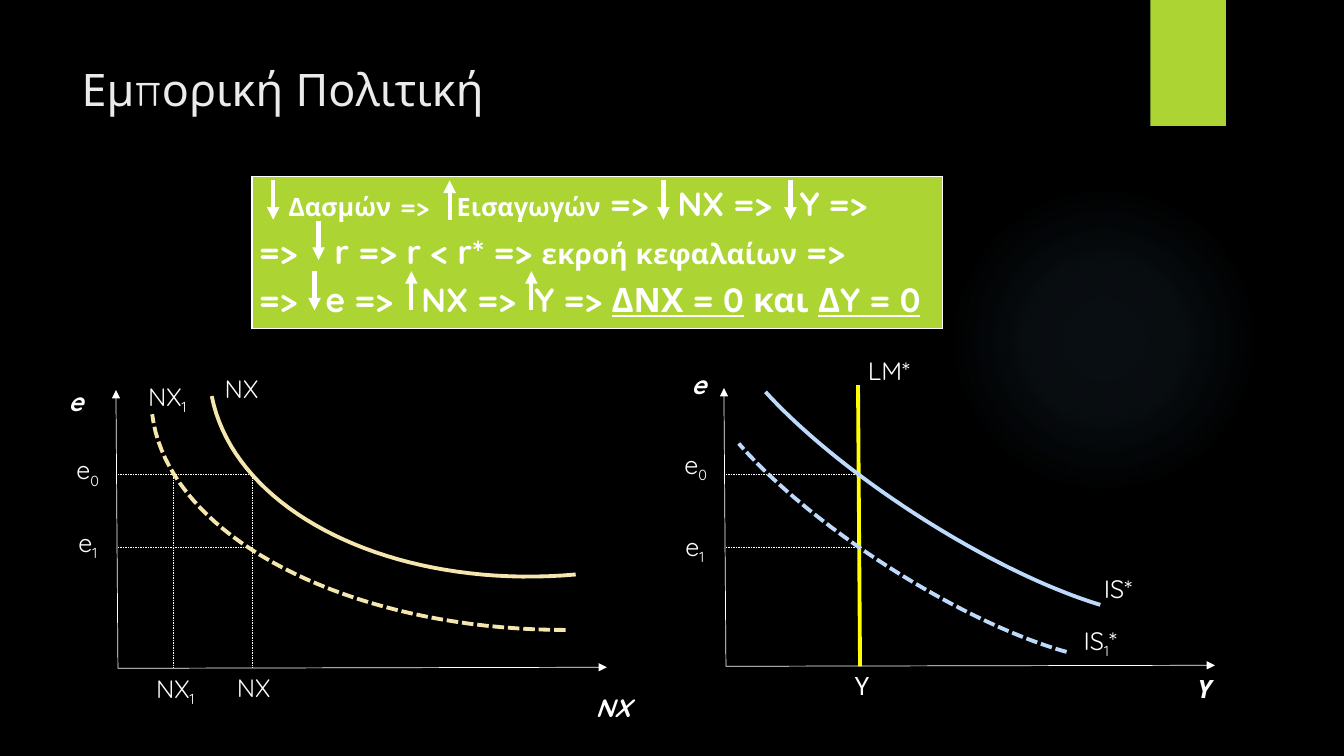
"""Builds a slide on trade policy with two linked economic diagrams."""
from lxml import etree
from pptx import Presentation
from pptx.dml.color import RGBColor
from pptx.enum.dml import MSO_LINE
from pptx.enum.shapes import MSO_CONNECTOR, MSO_SHAPE
from pptx.enum.text import MSO_ANCHOR, PP_ALIGN
from pptx.oxml import parse_xml
from pptx.oxml.ns import nsdecls, qn
from pptx.util import Inches, Pt

STRAIGHT = MSO_CONNECTOR.STRAIGHT
DASH, SHORT = MSO_LINE.DASH, MSO_LINE.SQUARE_DOT
OVAL, RECT, ARC = MSO_SHAPE.OVAL, MSO_SHAPE.RECTANGLE, MSO_SHAPE.ARC
LEFT, MIDDLE = PP_ALIGN.LEFT, MSO_ANCHOR.MIDDLE
BLACK = RGBColor(0x00, 0x00, 0x00)
WHITE = RGBColor(0xFF, 0xFF, 0xFF)
PALE = RGBColor(0xEB, 0xEB, 0xEB)
LIME = RGBColor(0xAC, 0xD4, 0x33)
YELLOW = RGBColor(0xFF, 0xFF, 0x00)
CREAM = RGBColor(0xF5, 0xE6, 0xAD)
SKY = RGBColor(0xBD, 0xD9, 0xFB)
FONT = "Quicksand"
CELL = Inches(1)


def grid(*spots):
    """Turn columns and rows of the grid into lengths."""
    return [round(spot * CELL) for spot in spots]


def draw(x1, y1, x2, y2, width, color=WHITE, dash=None, arrow=False):
    """Add a straight line, with an arrowhead at its end if asked."""
    link = slide.shapes.add_connector(STRAIGHT, *grid(x1, y1, x2, y2))
    link.line.color.rgb = color
    link.line.width = Pt(width)
    if dash:
        link.line.dash_style = dash
    if arrow:
        etree.SubElement(link.line._get_or_add_ln(), qn("a:tailEnd"), type="triangle")
    etree.SubElement(link._element.spPr, qn("a:effectLst"))


prs = Presentation()
prs.slide_width, prs.slide_height = grid(13.33, 7.5)
slide = prs.slides.add_slide(prs.slide_layouts[5])
slide.background.fill.solid()
slide.background.fill.fore_color.rgb = BLACK

glow = slide.shapes.add_shape(OVAL, *grid(9.41, 1.83, 3.08, 3.08))
glow.shadow.inherit = False
glow.line.fill.background()
glow.fill.background()
stops = "".join(
    f'<a:gs pos="{pos}000"><a:srgbClr val="7AC4F0"><a:alpha val="{alpha}000"/></a:srgbClr></a:gs>'
    for pos, alpha in ((0, 7), (36, 6), (69, 0))
)
fade = parse_xml(
    f'<a:gradFill {nsdecls("a")}><a:gsLst>{stops}</a:gsLst><a:path path="circle">'
    '<a:fillToRect l="50000" t="50000" r="50000" b="50000"/></a:path></a:gradFill>'
)
props = glow._element.spPr
props.replace(props.find(qn("a:noFill")), fade)

flag = slide.shapes.add_shape(RECT, *grid(11.41, 0, 0.75, 1.25))
flag.shadow.inherit = False
flag.fill.solid()
flag.fill.fore_color.rgb = LIME
flag.line.fill.background()

title = slide.shapes.title
title.left, title.top, title.width, title.height = grid(0.71, 0.5, 10.29, 0.75)
title.text_frame.text = "Εμπορική Πολιτική"
title.text_frame.vertical_anchor = MIDDLE
head = title.text_frame.paragraphs[0]
head.alignment = LEFT
font = head.runs[0].font
font.name, font.size, font.color.rgb = FONT, Pt(32), PALE

frame = slide.shapes.add_table(1, 1, *grid(2.5, 1.75, 6.85, 1.51))
table = frame.table
table.first_row = table.horz_banding = False
cell = table.cell(0, 0)
cell.fill.solid()
cell.fill.fore_color.rgb = LIME
cell.margin_left, cell.margin_right, cell.margin_top, cell.margin_bottom = grid(0.07, 0.07, 0, 0)
for spot, (side, width) in enumerate((("L", 1), ("R", 1), ("T", 1), ("B", 1))):
    edge = parse_xml(
        f'<a:ln{side} {nsdecls("a")} w="{Pt(width)}"><a:solidFill>'
        f'<a:srgbClr val="{WHITE}"/></a:solidFill></a:ln{side}>'
    )
    cell._tc.get_or_add_tcPr().insert(spot, edge)

ROWS = (
    ((0.29, 1.96, 4.15, 5.36),
     (("\t", 24, 0), ("Δασμών", 18, 0), (" ", 24, 0), ("=>\tΕισαγωγών", 18, 0),
      (" =>\tNX =>\tY =>", 24, 0))),
    ((0.75,),
     (("=>\tr => r < r* => ", 24, 0), ("εκροή κεφαλαίων", 20, 0), (" =>", 24, 0))),
    ((0.66, 1.61, 2.73),
     (("=>\te =>\tNX =>\tY => ", 24, 0), ("ΔΝΧ = 0", 24, 1), (" και ", 24, 0),
      ("ΔY = 0", 24, 1))),
)
body = cell.text_frame
for row, (tabs, parts) in enumerate(ROWS):
    para = body.add_paragraph() if row else body.paragraphs[0]
    para.line_spacing = 1.15
    marks = etree.SubElement(para._p.get_or_add_pPr(), qn("a:tabLst"))
    for tab in tabs:
        etree.SubElement(marks, qn("a:tab"), pos=str(grid(tab)[0]), algn="l")
    for text, size, under in parts:
        run = para.add_run()
        run.text = text
        font = run.font
        font.name, font.size, font.color.rgb = FONT, Pt(size), WHITE
        font.bold, font.underline = True, bool(under)

for top, downs, ups in (
    (1.79, (2.71, 6.58, 7.84), (4.46,)),
    (2.19, (3.16,), ()),
    (2.69, (3.12,), (4.08, 5.27)),
):
    low = top + 0.39
    for x in downs:
        draw(x, top, x, low, 3, arrow=True)
    for x in ups:
        draw(x, low, x, top, 3, arrow=True)

draw(8.53, 6.61, 8.51, 3.82, 2.75, YELLOW)
for x, y, top in ((1.17, 6.63, 3.87), (7.2, 6.61, 3.85)):
    draw(x, y, x + 4.85, y - 0.01, 0.5, arrow=True)
    draw(x, y, x - 0.02, top, 0.5, arrow=True)
for left, right in ((1.17, 2.5), (7.2, 8.51)):
    for y in (4.7, 5.43):
        draw(left, y, right, y, 0.25, dash=DASH)
for x in (1.72, 2.5):
    draw(x, 4.71, x, 6.63, 0.25, dash=DASH)

for left, top, width, dash in ((6.73, 3.69, 5.59, None), (6.54, 4.19, 5.36, SHORT)):
    curve = slide.shapes.add_shape(ARC, *grid(left, top, width, 1.55))
    curve.adjustments[0], curve.adjustments[1] = 117.11, 206.36
    curve.rotation = 212.7
    curve.shadow.inherit = False
    curve.fill.background()
    curve.line.color.rgb, curve.line.width = SKY, Pt(2.75)
    curve.line.dash_style = dash

STEPS = 40
for knots, dash in (
    (((5.61, 6.25), (3.45, 6.25), (1.66, 5.32), (1.51, 4.11)), SHORT),
    (((5.71, 5.7), (3.91, 5.86), (2.33, 5.09), (2.1, 3.93)), None),
):
    points = []
    for step in range(STEPS + 1):
        t = step / STEPS
        shares = ((1 - t) ** 3, 3 * t * (1 - t) ** 2, 3 * t * t * (1 - t), t ** 3)
        points.append(grid(*(sum(s * k[axis] for s, k in zip(shares, knots)) for axis in (0, 1))))
    path = slide.shapes.build_freeform(*points[0])
    path.add_line_segments(points[1:], close=False)
    curve = path.convert_to_shape()
    curve.shadow.inherit = False
    curve.fill.background()
    curve.line.color.rgb, curve.line.width = CREAM, Pt(2.75)
    curve.line.dash_style = dash

LABELS = (
    (8.51, 3.48, "LM*", False), (11.78, 6.63, "Υ", True), (6.76, 3.61, "e", True),
    (10.85, 5.64, "IS*", False), (6.69, 4.41, "e|0", False), (6.7, 5.22, "e|1", False),
    (8.38, 6.6, "Υ", False), (10.65, 6.15, "IS|1|*", False), (5.81, 6.82, "NX", True),
    (0.58, 3.78, "e", True), (2.13, 3.65, "NX", False), (0.66, 4.46, "e|0", False),
    (2.25, 6.62, "NX", False), (1.45, 6.63, "NX|1", False), (1.37, 3.73, "NX|1", False),
    (0.68, 5.18, "e|1", False),
)
for left, top, text, strong in LABELS:
    box = slide.shapes.add_textbox(*grid(left, top, 0.72, 0.48))
    box.text_frame.word_wrap = True
    para = box.text_frame.paragraphs[0]
    for spot, part in enumerate(text.split("|")):
        run = para.add_run()
        run.text = part
        font = run.font
        font.name, font.size, font.color.rgb = FONT, Pt(18), WHITE
        font.bold = font.italic = strong
        if spot == 1:
            run._r.get_or_add_rPr().set("baseline", "-25000")

prs.save("out.pptx")
